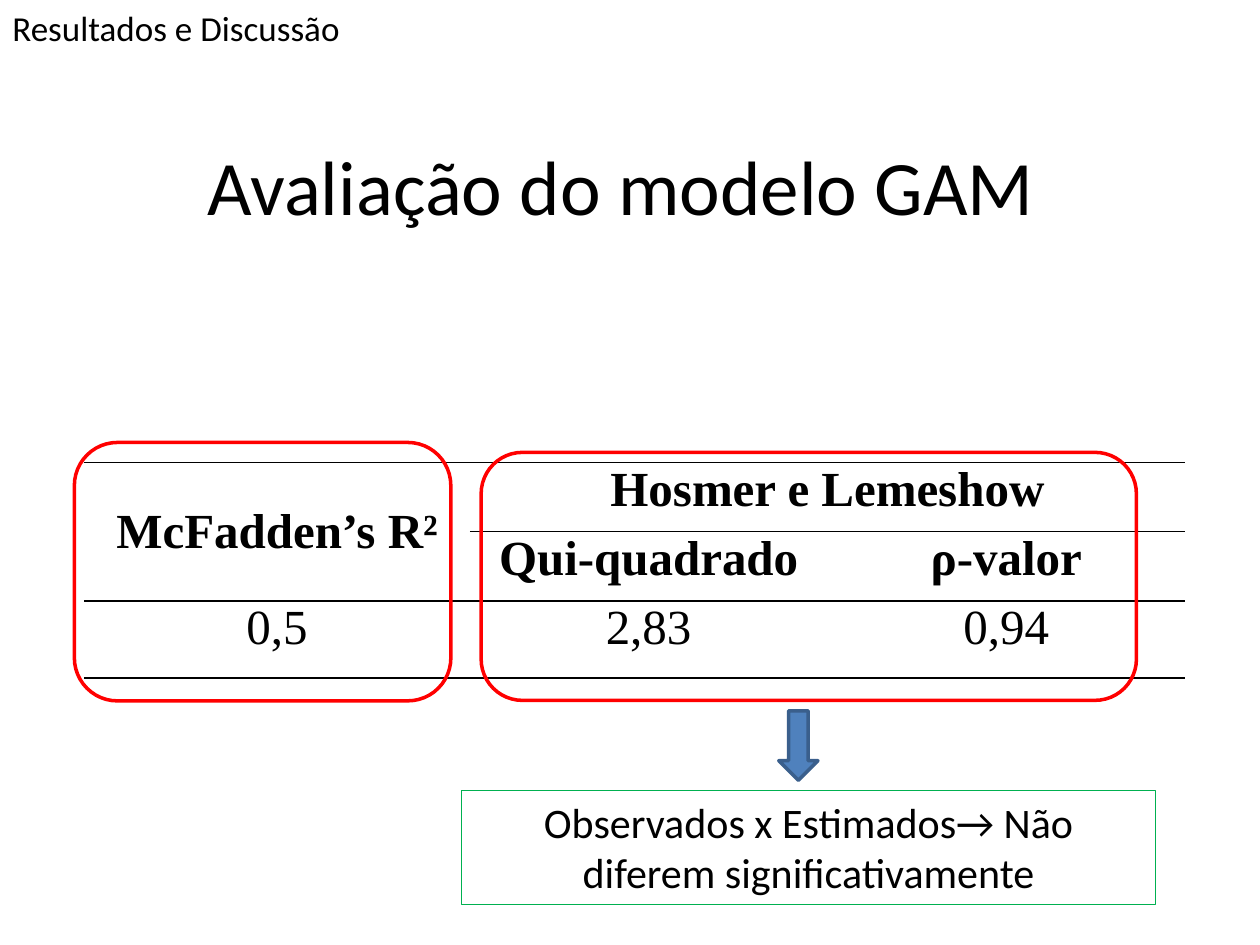
from dataclasses import dataclass

from lxml.etree import SubElement
from pptx import Presentation
from pptx.dml.color import RGBColor
from pptx.enum.shapes import MSO_SHAPE
from pptx.enum.text import MSO_ANCHOR, PP_ALIGN
from pptx.oxml.ns import qn
from pptx.util import Cm, Pt


@dataclass(frozen=True)
class Theme:
    text: str = "000000"
    highlight: str = "FF0000"
    conclusion: str = "00B050"
    arrow: str = "4F81BD"
    arrow_edge: str = "3A5F8C"
    body_font: str = "Calibri"
    table_font: str = "Times New Roman"
    title_size: int = 44
    table_size: int = 28
    conclusion_size: int = 24
    section_size: int = 20


THEME = Theme()


def lengths(*values):
    return [Cm(value) for value in values]


def write_text(frame, text, size, font=THEME.body_font, bold=False,
               align=PP_ALIGN.CENTER):
    para = frame.paragraphs[0]
    para.alignment = align
    span = para.add_run()
    span.text = text
    span.font.name = font
    span.font.size = Pt(size)
    span.font.bold = bold
    span.font.color.rgb = RGBColor.from_string(THEME.text)


def set_line(shape, color, width):
    shape.line.color.rgb = RGBColor.from_string(color)
    shape.line.width = Pt(width)


def add_title(page, text, place):
    title = page.shapes.title
    title.left, title.top, title.width, title.height = lengths(*place)
    title.text_frame.vertical_anchor = MSO_ANCHOR.MIDDLE
    write_text(title.text_frame, text, THEME.title_size)


def add_text_box(page, text, place, size, line=None, align=PP_ALIGN.CENTER):
    box = page.shapes.add_textbox(*lengths(*place))
    box.text_frame.word_wrap = True
    write_text(box.text_frame, text, size, align=align)
    if line:
        set_line(box, line, 0.75)


def add_outline(page, kind, place, line, fill=None):
    shape = page.shapes.add_shape(kind, *lengths(*place))
    shape.shadow.inherit = False
    set_line(shape, line, 2)
    if fill:
        shape.fill.solid()
        shape.fill.fore_color.rgb = RGBColor.from_string(fill)
    else:
        shape.fill.background()


def set_borders(cell, ruled):
    properties = cell._tc.get_or_add_tcPr()
    for position, side in enumerate(("L", "R", "T", "B")):
        edge = SubElement(properties, qn(f"a:ln{side}"), w=str(Pt(1)))
        if side in ruled:
            fill = SubElement(edge, qn("a:solidFill"))
            SubElement(fill, qn("a:srgbClr"), val=THEME.text)
        else:
            SubElement(edge, qn("a:noFill"))
        properties.insert(position, edge)


def add_results_table(page, rows, left, top, widths, heights):
    place = lengths(left, top, sum(widths), sum(heights))
    table = page.shapes.add_table(len(heights), len(widths), *place).table
    table.first_row = table.horz_banding = False
    for column, width in zip(table.columns, widths):
        column.width = Cm(width)
    for row, height in zip(table.rows, heights):
        row.height = Cm(height)
    table.cell(0, 0).merge(table.cell(1, 0))
    table.cell(0, 1).merge(table.cell(0, 2))

    last = len(rows) - 1
    for row_index, texts in enumerate(rows):
        for column_index, text in enumerate(texts):
            cell = table.cell(row_index, column_index)
            cell.fill.background()
            cell.margin_left = cell.margin_right = Cm(0.18)
            cell.margin_top = cell.margin_bottom = 0
            in_merged_header = column_index == 0 and row_index < last
            if in_merged_header:
                cell.vertical_anchor = MSO_ANCHOR.MIDDLE
                set_borders(cell, "TB" if row_index == 0 else "B")
            else:
                set_borders(cell, "TB")
            if text:
                write_text(cell.text_frame, text, THEME.table_size,
                           font=THEME.table_font, bold=row_index < last)


def main():
    deck = Presentation()
    deck.slide_width, deck.slide_height = lengths(25.4, 19.05)
    page = deck.slides.add_slide(deck.slide_layouts[5])

    add_title(page, "Avaliação do modelo GAM", (1.09, 2.13, 22.86, 3.18))
    rows = (
        ("McFadden’s R²", "Hosmer e Lemeshow", ""),
        ("", "Qui-quadrado", "ρ-valor"),
        ("0,5", "2,83", "0,94"),
    )
    add_results_table(page, rows, 1.7, 9.32,
                      widths=(7.77, 7.21, 7.21), heights=(1.4, 1.4, 1.55))
    add_text_box(page, "Resultados e Discussão", (0, 0, 8.89, 1.12),
                 THEME.section_size, align=PP_ALIGN.LEFT)
    for place in ((1.5, 8.92, 7.59, 5.21), (9.7, 9.12, 13.21, 5)):
        add_outline(page, MSO_SHAPE.ROUNDED_RECTANGLE, place, THEME.highlight)
    add_text_box(page, "Observados x Estimados→ Não diferem significativamente",
                 (9.3, 15.93, 14, 2.31), THEME.conclusion_size,
                 line=THEME.conclusion)
    add_outline(page, MSO_SHAPE.DOWN_ARROW, (15.7, 14.33, 0.79, 1.4),
                THEME.arrow_edge, fill=THEME.arrow)

    deck.save("out.pptx")


if __name__ == "__main__":
    main()
